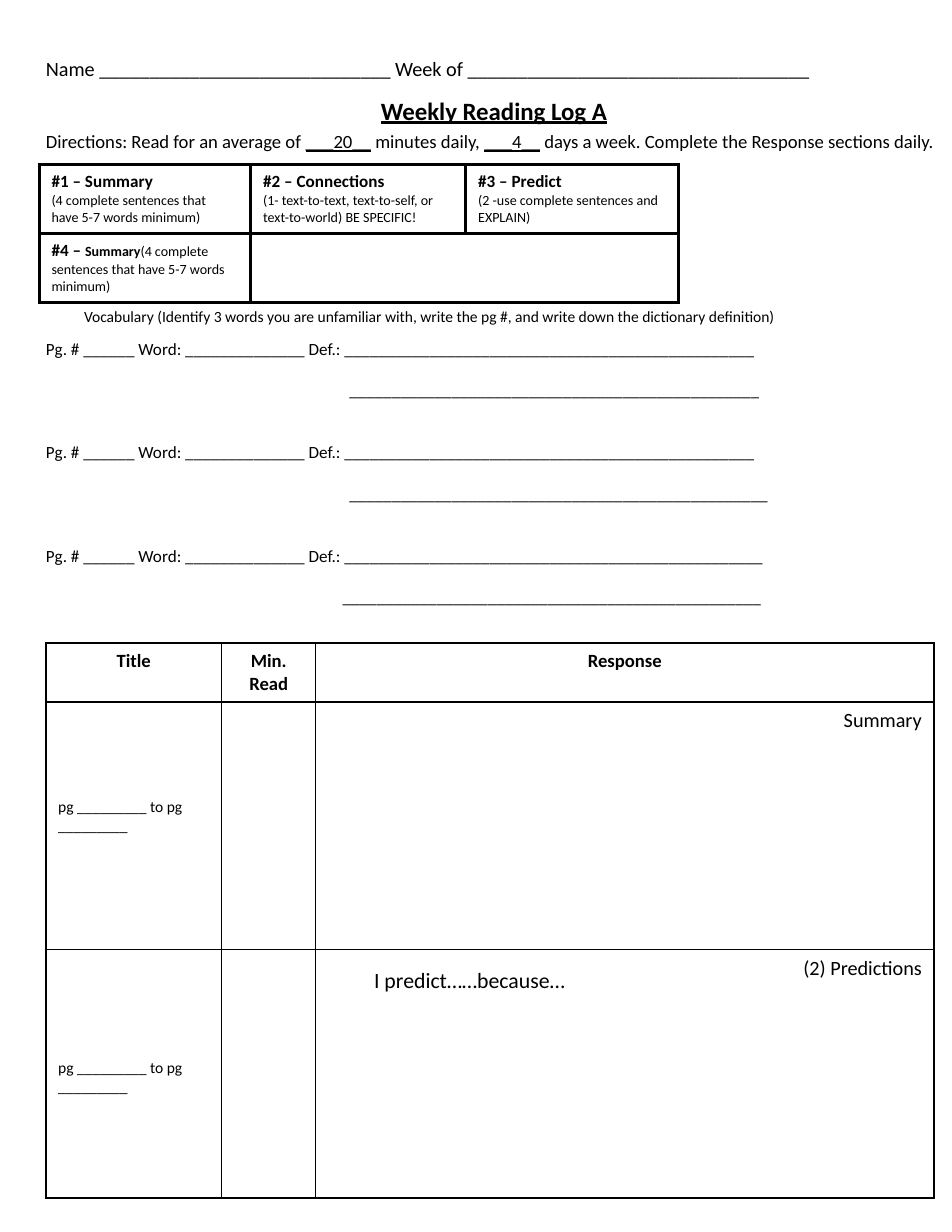
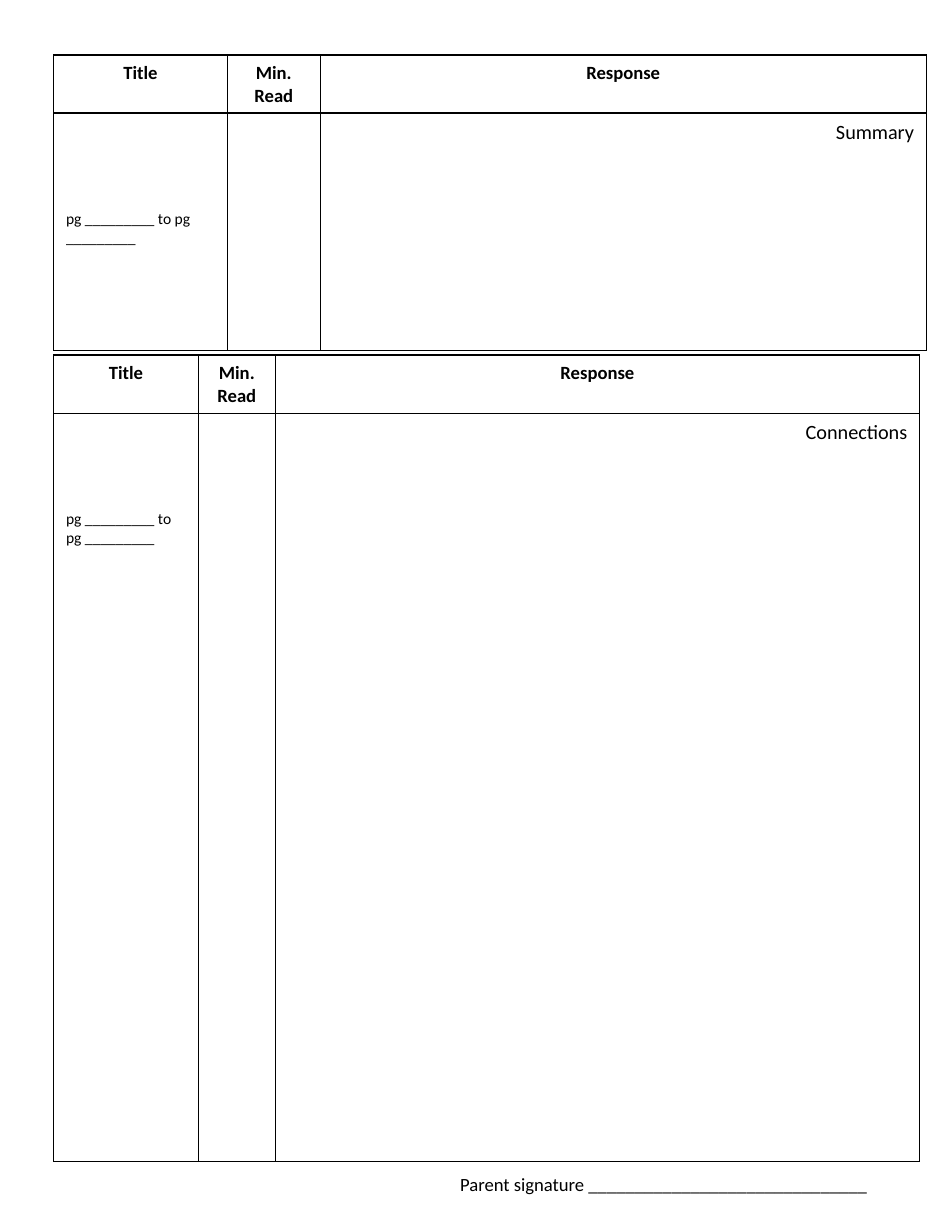
import pptx
import pptx.util
import pptx.dml.color
import pptx.enum.text
import pptx.oxml
import pptx.oxml.ns

Inches = pptx.util.Inches
Pt = pptx.util.Pt
ALIGN = pptx.enum.text.PP_ALIGN
BLACK = pptx.dml.color.RGBColor(0, 0, 0)
FONT = "Calibri"
PAGES = "pg _________ to pg _________"
HEADINGS = ["Title", "Min. Read", "Response"]


def write(tf, paragraphs, align=ALIGN.LEFT):
    """Each paragraph is a list of runs: (text, size, styles), styles holding b and u."""
    for i, runs in enumerate(paragraphs):
        p = tf.paragraphs[0] if i == 0 else tf.add_paragraph()
        p.alignment = align
        for text, size, styles in runs:
            r = p.add_run()
            r.text = text
            r.font.name = FONT
            r.font.size = Pt(size)
            r.font.color.rgb = BLACK
            r.font.bold = "b" in styles
            r.font.underline = "u" in styles


def add_grid(slide, left, top, widths, heights, line, right_margin=0.11):
    """Add an unfilled table with black borders of the given weight."""
    frame = slide.shapes.add_table(len(heights), len(widths), Inches(left), Inches(top),
                                   Inches(sum(widths)), Inches(sum(heights)))
    table = frame.table
    table.first_row = table.horz_banding = False
    for column, width in zip(table.columns, widths):
        column.width = Inches(width)
    for row, height in zip(table.rows, heights):
        row.height = Inches(height)
    for cell in table.iter_cells():
        cell.margin_left, cell.margin_right = Inches(0.11), Inches(right_margin)
        cell.margin_top = cell.margin_bottom = Inches(0.06)
        tcPr = cell._tc.get_or_add_tcPr()
        for side in "LRTB":
            tcPr.append(pptx.oxml.parse_xml(
                f'<a:ln{side} {pptx.oxml.ns.nsdecls("a")} w="{Pt(line)}">'
                f'<a:solidFill><a:srgbClr val="{BLACK}"/></a:solidFill></a:ln{side}>'))
        cell.fill.background()
    return table


prs = pptx.Presentation()
prs.slide_width, prs.slide_height = Inches(8.5), Inches(11)
log, log_back = [prs.slides.add_slide(prs.slide_layouts[6]) for _ in range(2)]

# Response tables: each entry is (label, height of row, space above the page range)
response_tables = [
    (log, 0.41, 5.74, [1.57, 0.84, 5.52],
     [("Summary", 2.21, 0.86), ("(2) Predictions", 2.22, 0.98)]),
    (log_back, 0.48, 0.49, [1.55, 0.83, 5.41], [("Summary", 2.12, 0.86)]),
    (log_back, 0.48, 3.17, [1.29, 0.69, 5.75], [("Connections", 6.68, 0.86)]),
]
for slide, left, top, widths, entries in response_tables:
    heights = [0.51] + [height for _, height, _ in entries]
    table = add_grid(slide, left, top, widths, heights, 1)
    for col, heading in enumerate(HEADINGS):
        write(table.cell(0, col).text_frame, [[(heading, 12, "b")]], ALIGN.CENTER)
    for row, (label, _, space) in enumerate(entries, 1):
        pages = table.cell(row, 0)
        pages.margin_top = Inches(space)
        write(pages.text_frame, [[(PAGES, 10, "")]])
        write(table.cell(row, 2).text_frame, [[(label, 13, "")]], ALIGN.RIGHT)

# Response types
types = add_grid(log, 0.35, 1.47, [1.89, 1.92, 1.9], [0.6, 0.62], 2.25, 0.16)
types.cell(1, 1).merge(types.cell(1, 2))
for col, (heading, detail) in enumerate([
        ("#1 – Summary", "(4 complete sentences that have 5-7 words minimum)"),
        ("#2 – Connections", "(1- text-to-text, text-to-self, or text-to-world) BE SPECIFIC!"),
        ("#3 – Predict", "(2 -use complete sentences and EXPLAIN)")]):
    write(types.cell(0, col).text_frame, [[(heading, 11, "b")], [(detail, 9, "")]])
write(types.cell(1, 0).text_frame, [[
    ("#4 – ", 11, "b"), ("Summary", 9, "b"),
    ("(4 complete sentences that have 5-7 words minimum)", 9, "")]])

# Vocabulary lines: blanks on the first line, blanks and indent of the second
vocabulary = []
indents = []
for first, second, indent in [(48, 48, 2.71), (48, 49, 2.71), (49, 49, 2.65)]:
    vocabulary += [[("Pg. # ______ Word: ______________ Def.: " + "_" * first, 11, "")],
                   [("_" * second, 11, "")]]
    indents += [0, indent]

# Text boxes
texts = [
    (log, 0.35, 0.44, 7.05, 0.33, 0.06,
     [[("Name " + "_" * 29 + " Week of " + "_" * 34, 13, "")]]),
    (log, 3.34, 0.79, 2.17, 0.38, 0.06, [[("Weekly Reading Log A", 16, "bu")]]),
    (log, 0.35, 1.1, 8.19, 0.31, 0.06, [[
        ("Directions: Read for an average of ", 12, ""), ("___20__", 12, "u"),
        (" minutes daily, ", 12, ""), ("___4__", 12, "u"),
        (" days a week. Complete the Response sections daily.", 12, "")]]),
    (log, 0.69, 2.68, 6.38, 0.28, 0.06, [[
        ("Vocabulary (Identify 3 words you are unfamiliar with, write the pg #, "
         "and write down the dictionary definition)", 10, "")]]),
    (log, 0.35, 2.96, 6.63, 2.6, 0.06, vocabulary),
    (log, 3.29, 8.58, 2.65, 0.34, 0.05, [[("I predict……because…", 14, "")]]),
    (log_back, 4.01, 10.41, 4.25, 0.3, 0.1, [[("Parent signature " + "_" * 30, 12, "")]]),
]
for slide, left, top, width, height, inset, paragraphs in texts:
    sp = slide.shapes.add_textbox(Inches(left), Inches(top), Inches(width), Inches(height))
    tf = sp.text_frame
    tf.word_wrap = True
    tf.margin_left = tf.margin_right = Inches(inset)
    tf.margin_top = tf.margin_bottom = Inches(min(inset, 0.06))
    write(tf, paragraphs)
    if paragraphs is vocabulary:
        for i, (p, indent) in enumerate(zip(tf.paragraphs, indents)):
            p._p.get_or_add_pPr().set("marL", str(Inches(indent)))
            if i:
                p.space_before = Pt(13.4 if i % 2 else 26.8)

prs.save("out.pptx")
